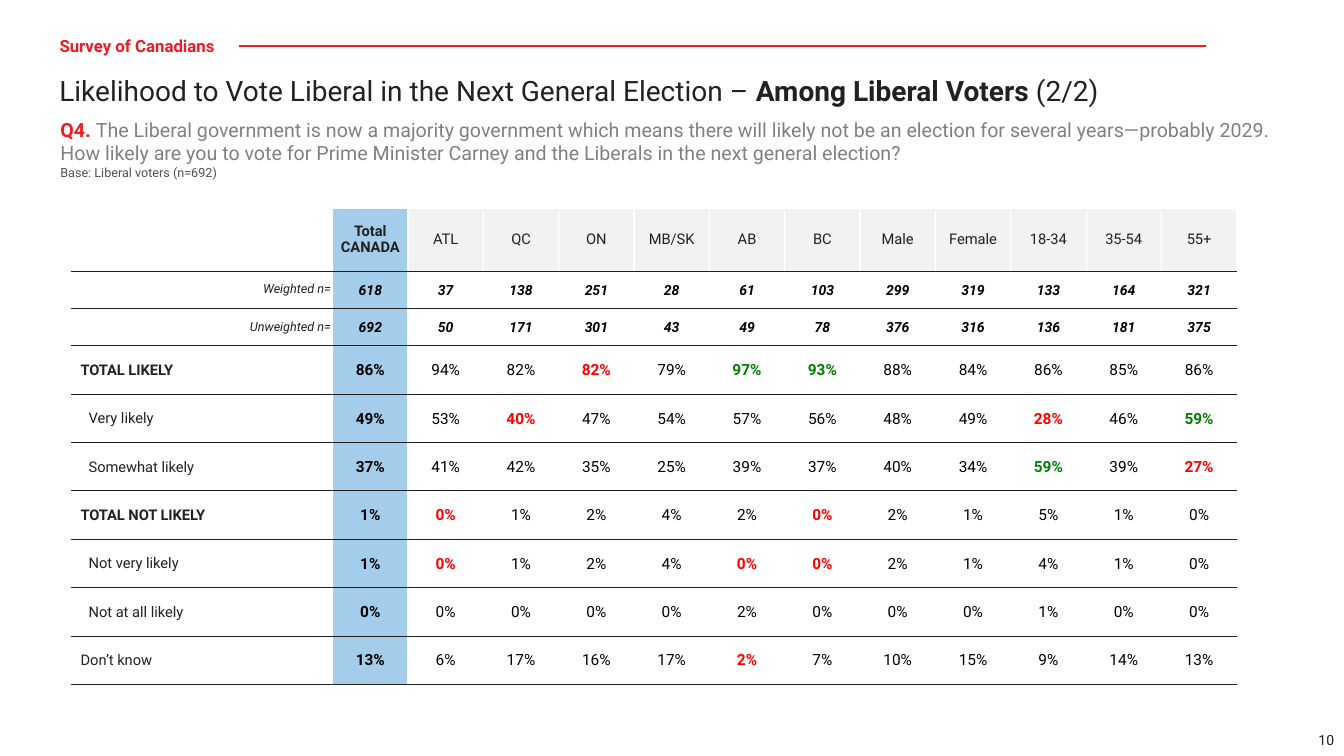
from lxml import etree
from pptx import Presentation
from pptx.dml.color import RGBColor
from pptx.enum.shapes import MSO_CONNECTOR
from pptx.enum.text import MSO_ANCHOR as Anchor, MSO_AUTO_SIZE as AutoSize, PP_ALIGN as Align
from pptx.oxml import parse_xml
from pptx.oxml.ns import nsdecls, qn
from pptx.util import Inches, Pt

RED = RGBColor(0xED, 0x1C, 0x24)
INK = RGBColor(0x21, 0x21, 0x21)
GREY = RGBColor(0x80, 0x80, 0x80)
BASE_GREY = RGBColor(0x51, 0x51, 0x56)
BLACK = RGBColor(0, 0, 0)
WHITE = RGBColor(0xFF, 0xFF, 0xFF)
TOTAL_BLUE = RGBColor(0xA4, 0xCD, 0xEB)
HEADER_GREY = RGBColor(0xF2, 0xF2, 0xF2)
LOWER = RGBColor(0xFF, 0, 0)
HIGHER = RGBColor(0, 0x80, 0)

GROUPS = ["Total\nCANADA", "ATL", "QC", "ON", "MB/SK", "AB", "BC",
          "Male", "Female", "18-34", "35-54", "55+"]
SAMPLES = [
    ("Weighted n=", "618 37 138 251 28 61 103 299 319 133 164 321"),
    ("Unweighted n=", "692 50 171 301 43 49 78 376 316 136 181 375"),
]
# Label, indent, percentages; + and - mark significantly higher and lower results
ANSWERS = [
    ("TOTAL LIKELY", 0.08, "86 94 82 82- 79 97+ 93+ 88 84 86 85 86"),
    ("Very likely", 0.16, "49 53 40- 47 54 57 56 48 49 28- 46 59+"),
    ("Somewhat likely", 0.16, "37 41 42 35 25 39 37 40 34 59+ 39 27-"),
    ("TOTAL NOT LIKELY", 0.08, "1 0- 1 2 4 2 0- 2 1 5 1 0"),
    ("Not very likely", 0.16, "1 0- 1 2 4 0- 0- 2 1 4 1 0"),
    ("Not at all likely", 0.16, "0 0 0 0 0 2 0 0 0 1 0 0"),
    ("Don’t know", 0.08, "13 6 17 16 17 2- 7 10 15 9 14 13"),
]


def add_run(paragraph, text, size, color, bold=False, italic=False):
    run = paragraph.add_run()
    run.text = text
    font = run.font
    font.name, font.size, font.bold, font.italic = "Roboto", Pt(size), bold, italic
    font.color.rgb = color


def fill_cell(cell, text, size, color, bold=False, italic=False, fill=None,
              align=Align.CENTER, margins=(0.01, 0.01, 0.01, 0), spacing=None):
    cell.vertical_anchor = Anchor.MIDDLE
    cell.margin_left, cell.margin_top, cell.margin_right, cell.margin_bottom = map(Inches, margins)
    if fill is None:
        cell.fill.background()
    else:
        cell.fill.solid()
        cell.fill.fore_color.rgb = fill
    for i, line in enumerate(text.split("\n")):
        paragraph = cell.text_frame.paragraphs[0] if i == 0 else cell.text_frame.add_paragraph()
        paragraph.alignment = align
        if spacing:
            paragraph.line_spacing = spacing
        add_run(paragraph, line, size, color, bold, italic)


prs = Presentation()
prs.slide_width, prs.slide_height = Inches(13.33), Inches(7.5)
slide = prs.slides.add_slide(prs.slide_layouts[5])
shapes = slide.shapes

# Red rule
rule = shapes.add_connector(MSO_CONNECTOR.STRAIGHT, Inches(0.9), Inches(0.46),
                            Inches(11.96), Inches(0.46))
rule.line.color.rgb = RED
rule.line.width = Pt(1.5)
etree.SubElement(rule._element.spPr, qn("a:effectLst"))

# Section title, in front of the rule
title = shapes.title
title.left, title.top, title.width, title.height = map(Inches, (0.49, 0.33, 1.88, 0.28))
title.fill.solid()
title.fill.fore_color.rgb = WHITE
title.text_frame.auto_size = AutoSize.NONE
title.text_frame.word_wrap = True
title.text_frame.vertical_anchor = Anchor.TOP
section = title.text_frame.paragraphs[0]
section.alignment = Align.LEFT
section.line_spacing = 0.9
add_run(section, "Survey of Canadians", 12, RED, bold=True)
rule._element.addnext(title._element)

# Heading, question with base, page number
frames = []
for box in [(0.49, 0.72, 11.47, 0.39), (0.5, 1.12, 12.25, 0.96), (12.09, 7.18, 1.24, 0.32)]:
    frame = shapes.add_textbox(*map(Inches, box)).text_frame
    frame.word_wrap = True
    frames.append(frame)
heading_frame, question_frame, page_frame = frames

heading = heading_frame.paragraphs[0]
heading.line_spacing = 0.9
add_run(heading, "Likelihood to Vote Liberal in the Next General Election – ", 20, INK)
add_run(heading, "Among Liberal Voters ", 20, INK, bold=True)
add_run(heading, "(2/2)", 20, INK)

question = question_frame.paragraphs[0]
add_run(question, "Q4. ", 14, RED, bold=True)
add_run(question, "The Liberal government is now a majority government which means there will "
        "likely not be an election for several years—probably 2029. How likely are you to vote "
        "for Prime Minister Carney and the Liberals in the next general election?", 14, GREY)
add_run(question_frame.add_paragraph(), "Base: Liberal voters (n=692)", 9, BASE_GREY)

page_frame.vertical_anchor = Anchor.MIDDLE
page_frame.paragraphs[0].alignment = Align.RIGHT
add_run(page_frame.paragraphs[0], "10", 10, INK)

# Results table
heights = [0.62] + [0.37] * len(SAMPLES) + [0.48] * len(ANSWERS)
label_width, table_width = 2.59, 11.56
results = shapes.add_table(len(heights), len(GROUPS) + 1, Inches(0.71), Inches(2.07),
                           Inches(table_width), Inches(sum(heights))).table
results.first_row = results.horz_banding = False
for row, height in zip(results.rows, heights):
    row.height = Inches(height)
for col, column in enumerate(results.columns):
    column.width = Inches((table_width - label_width) / len(GROUPS) if col else label_width)

# Header row
results.cell(0, 0).fill.background()
for col, group in enumerate(GROUPS, 1):
    total = col == 1
    fill_cell(results.cell(0, col), group, 10.5, INK, bold=total,
              fill=TOTAL_BLUE if total else HEADER_GREY, margins=(0, 0, 0, 0),
              spacing=0.9 if total else None)

# Sample sizes
for row, (label, counts) in enumerate(SAMPLES, 1):
    fill_cell(results.cell(row, 0), label, 9, INK, italic=True, align=Align.RIGHT,
              margins=(0.02,) * 4, spacing=0.9)
    for col, count in enumerate(counts.split(), 1):
        fill_cell(results.cell(row, col), count, 10, BLACK, bold=True, italic=True,
                  fill=TOTAL_BLUE if col == 1 else None)

# Answers
for row, (label, indent, shares) in enumerate(ANSWERS, 1 + len(SAMPLES)):
    is_sum = label.startswith("TOTAL")
    row_fill = WHITE if is_sum else None
    label_cell = results.cell(row, 0)
    fill_cell(label_cell, label, 10.5, INK, bold=is_sum, fill=row_fill, align=Align.LEFT,
              margins=(0.01, 0.01, 0.1, 0))
    label_pr = label_cell.text_frame.paragraphs[0]._p.get_or_add_pPr()
    label_pr.set("marL", str(Inches(indent)))
    label_pr.set("indent", "0")
    for col, share in enumerate(shares.split(), 1):
        color = {"+": HIGHER, "-": LOWER}.get(share[-1], BLACK)
        fill_cell(results.cell(row, col), share.rstrip("+-") + "%", 11, color,
                  bold=col == 1 or color != BLACK, fill=TOTAL_BLUE if col == 1 else row_fill)

# Thin line under and over each row, none above the header
for row in range(len(heights)):
    for col in range(len(GROUPS) + 1):
        cell_pr = results.cell(row, col)._tc.get_or_add_tcPr()
        for place, side in enumerate(["lnT", "lnB"] if row else ["lnB"]):
            cell_pr.insert(place, parse_xml(
                f'<a:{side} {nsdecls("a")} w="{Pt(0.5)}"><a:solidFill>'
                f'<a:srgbClr val="{INK}"/></a:solidFill></a:{side}>'))

prs.save("out.pptx")
